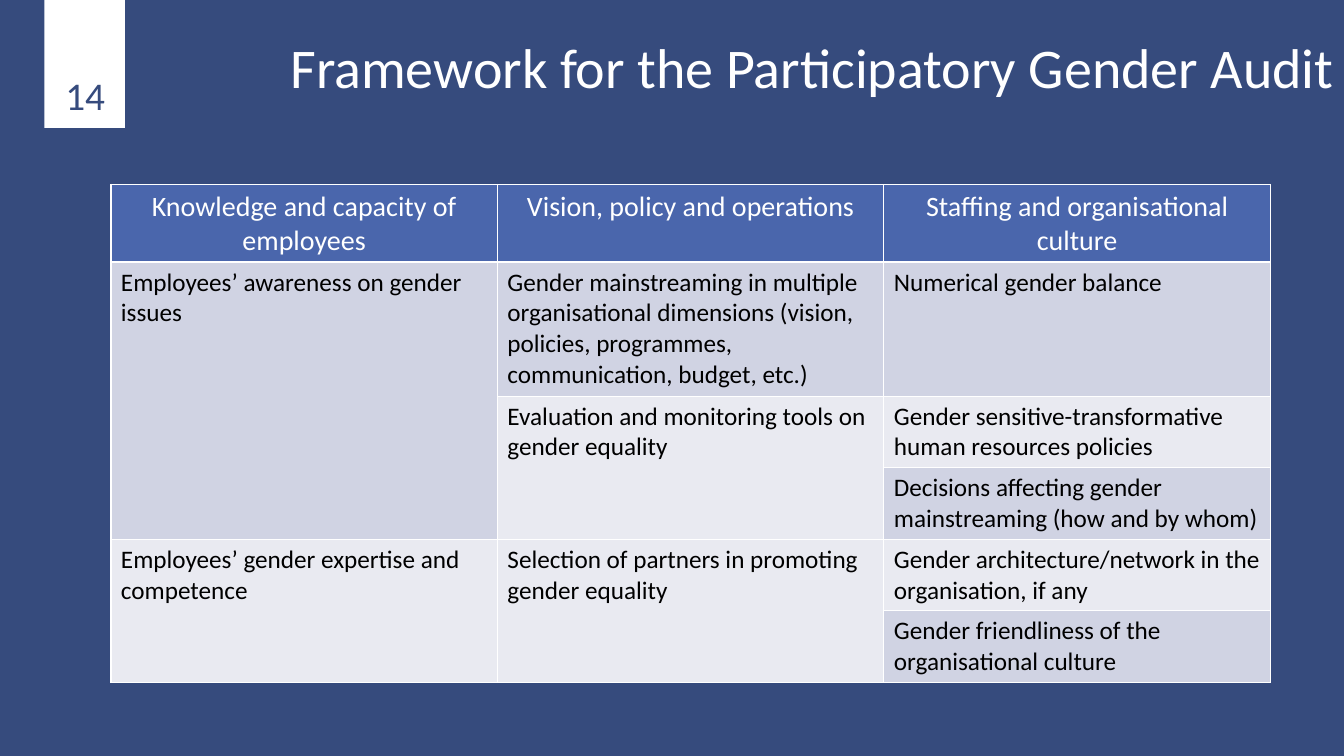
from lxml import etree
from pptx import Presentation
from pptx.dml.color import RGBColor
from pptx.enum.shapes import MSO_SHAPE as Shape
from pptx.enum.text import MSO_ANCHOR as Anchor, PP_ALIGN as Align
from pptx.oxml.ns import qn
from pptx.util import Inches, Pt

NAVY, BLUE, WHITE, BLACK = "364B7D", "4A66AC", "FFFFFF", "000000"
BANDS = ["D0D3E3", "E9EAF1"]

HEADERS = [
    "Knowledge and capacity of employees",
    "Vision, policy and operations",
    "Staffing and organisational culture",
]
# Each column lists its topics with the number of rows each one spans
TOPICS = [
    [("Employees’ awareness on gender issues", 3),
     ("Employees’ gender expertise and competence", 2)],
    [("Gender mainstreaming in multiple organisational dimensions "
      "(vision, policies, programmes, communication, budget, etc.)", 1),
     ("Evaluation and monitoring tools on gender equality", 2),
     ("Selection of partners in promoting gender equality", 2)],
    [("Numerical gender balance", 1),
     ("Gender sensitive-transformative human resources policies", 1),
     ("Decisions affecting gender mainstreaming (how and by whom)", 1),
     ("Gender architecture/network in the organisation, if any", 1),
     ("Gender friendliness of the organisational culture", 1)],
]
ROW_HEIGHTS = [0.77, 1.33] + [0.71] * 4


def color(value):
    return RGBColor.from_string(value)


def paint(target, value):
    target.fill.solid()
    target.fill.fore_color.rgb = color(value)


def write(frame, text, size=18, ink=BLACK, align=Align.LEFT, spacing=1.0, font="Calibri"):
    para = frame.paragraphs[0]
    para.alignment = align
    para.line_spacing = spacing
    span = para.add_run()
    span.text = text
    span.font.name = font
    span.font.size = Pt(size)
    span.font.color.rgb = color(ink)


def outline(cell, value=WHITE, width=1):
    properties = cell._tc.get_or_add_tcPr()
    for index, side in enumerate(("lnL", "lnR", "lnT", "lnB")):
        line = etree.Element(qn(f"a:{side}"), w=str(Pt(width)))
        fill = etree.SubElement(line, qn("a:solidFill"))
        etree.SubElement(fill, qn("a:srgbClr"), val=value)
        properties.insert(index, line)


class SlideBuilder:
    def __init__(self, deck, background):
        self.page = deck.slides.add_slide(deck.slide_layouts[5])
        paint(self.page.background, background)

    def title(self, text, left, top, width, height):
        box = self.page.shapes.title
        box.left, box.top = Inches(left), Inches(top)
        box.width, box.height = Inches(width), Inches(height)
        box.text_frame.word_wrap = True
        box.text_frame.vertical_anchor = Anchor.MIDDLE
        write(box.text_frame, text, size=40, ink=WHITE, align=Align.RIGHT, spacing=0.9)

    def rectangle(self, left, top, width, height, fill):
        box = self.page.shapes.add_shape(
            Shape.RECTANGLE, Inches(left), Inches(top), Inches(width), Inches(height))
        box.shadow.inherit = False
        paint(box, fill)
        box.line.fill.background()

    def label(self, text, left, top, width, height, **style):
        box = self.page.shapes.add_textbox(
            Inches(left), Inches(top), Inches(width), Inches(height))
        box.text_frame.word_wrap = True
        box.text_frame.vertical_anchor = Anchor.MIDDLE
        write(box.text_frame, text, **style)

    def cell(self, table, row, column, text, fill, rows=1, **style):
        first = table.cell(row, column)
        if rows > 1:
            first.merge(table.cell(row + rows - 1, column))
        for offset in range(rows):
            part = table.cell(row + offset, column)
            paint(part, fill)
            outline(part)
        write(first.text_frame, text, **style)

    def framework(self, left, top, width):
        table = self.page.shapes.add_table(
            len(ROW_HEIGHTS), len(HEADERS), Inches(left), Inches(top),
            Inches(width), Inches(sum(ROW_HEIGHTS))).table
        for row, height in zip(table.rows, ROW_HEIGHTS):
            row.height = Inches(height)
        for column, (header, topics) in enumerate(zip(HEADERS, TOPICS)):
            self.cell(table, 0, column, header, BLUE, size=20, ink=WHITE, align=Align.CENTER)
            row = 1
            for topic, rows in topics:
                self.cell(table, row, column, topic, BANDS[(row - 1) % 2], rows)
                row += rows


def main():
    deck = Presentation()
    deck.slide_width, deck.slide_height = Inches(13.33), Inches(7.5)
    slide = SlideBuilder(deck, NAVY)

    # Page number tab
    slide.rectangle(0.44, 0, 0.8, 1.27, WHITE)
    slide.label("14", 0.13, 0.61, 1.43, 0.66, size=28, ink=NAVY, align=Align.CENTER)

    # Title and audit framework
    slide.title("Framework for the Participatory Gender Audit", 1.83, 0, 11.5, 1.39)
    slide.framework(1.1, 1.83, 11.5)

    deck.save("out.pptx")


if __name__ == "__main__":
    main()
